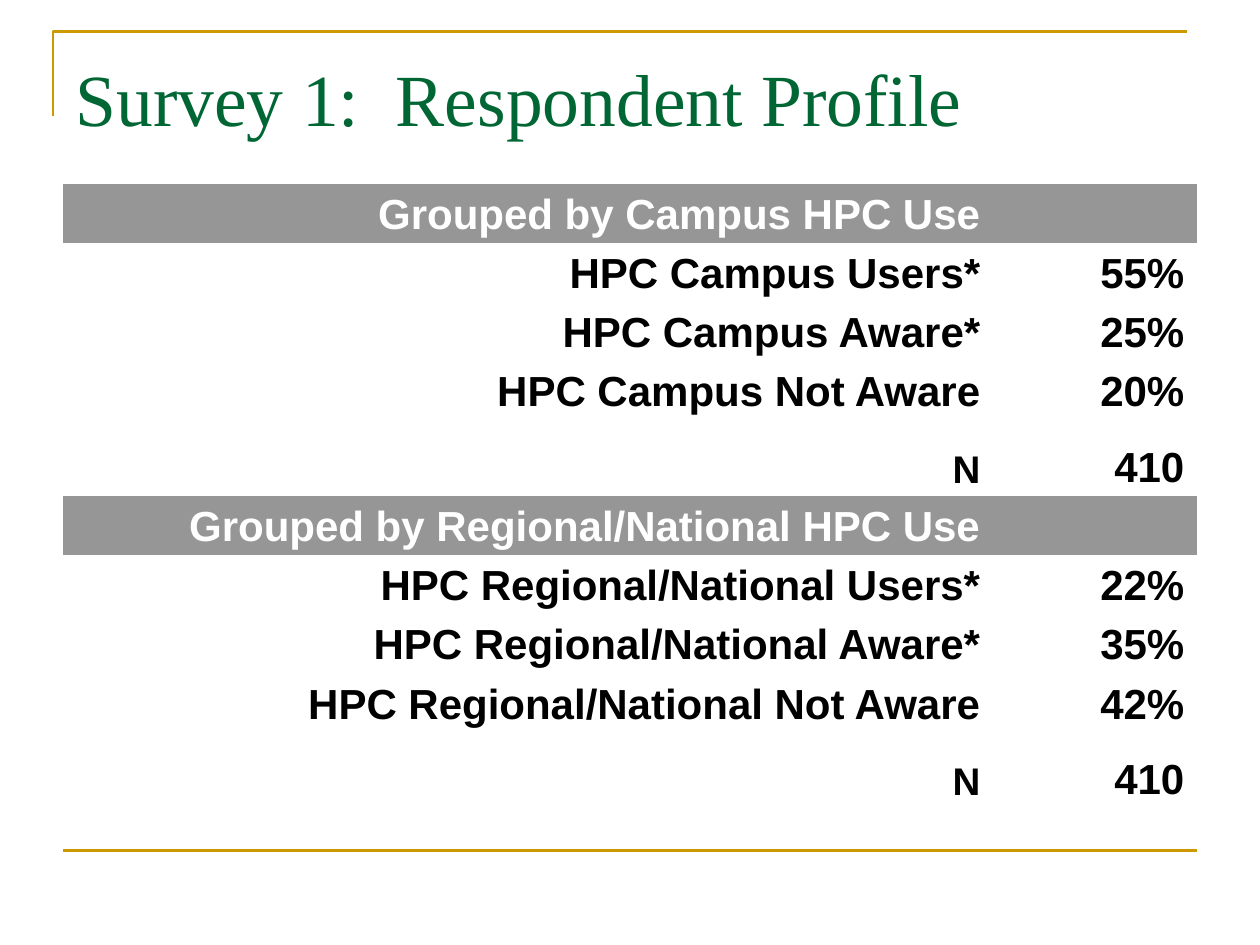
from dataclasses import dataclass

from lxml.etree import SubElement
from pptx import Presentation
from pptx.dml.color import RGBColor
from pptx.enum.shapes import MSO_CONNECTOR
from pptx.enum.text import MSO_ANCHOR, MSO_AUTO_SIZE, PP_ALIGN
from pptx.oxml.ns import qn
from pptx.slide import Slide
from pptx.table import _Cell as Cell
from pptx.util import Inches, Pt

GOLD = RGBColor(0xCC, 0x99, 0x00)
GREEN = RGBColor(0x00, 0x66, 0x33)
GRAY = RGBColor(0x96, 0x96, 0x96)
WHITE = RGBColor(0xFF, 0xFF, 0xFF)
BLACK = RGBColor(0x00, 0x00, 0x00)
NO_STYLE = "{2D5ABB26-0587-4C30-8999-92F81FD0307C}"
INDENT = Inches(0.38)


@dataclass
class Row:
    label: str
    value: str = ""
    head: bool = False
    total: bool = False


ROWS = [
    Row("Grouped by Campus HPC Use", head=True),
    Row("HPC Campus Users*", "55%"),
    Row("HPC Campus Aware*", "25%"),
    Row("HPC Campus Not Aware", "20%"),
    Row("N", "410", total=True),
    Row("Grouped by Regional/National HPC Use", head=True),
    Row("HPC Regional/National Users*", "22%"),
    Row("HPC Regional/National Aware*", "35%"),
    Row("HPC Regional/National Not Aware", "42%"),
    Row("N", "410", total=True),
]


def draw_frame(slide: Slide) -> None:
    pen = slide.shapes.build_freeform(Inches(0.42), Inches(0.92))
    pen.add_line_segments(
        [(Inches(0.42), Inches(0.25)), (Inches(9.42), Inches(0.25))], close=False
    )
    corner = pen.convert_to_shape()
    corner.fill.background()
    corner.shadow.inherit = False
    rule = slide.shapes.add_connector(
        MSO_CONNECTOR.STRAIGHT, Inches(0.5), Inches(6.75), Inches(9.5), Inches(6.75)
    )
    SubElement(rule.element.spPr, qn("a:effectLst"))
    for shape in (corner, rule):
        shape.line.color.rgb = GOLD
        shape.line.width = Pt(1.5)


def draw_title(slide: Slide, text: str) -> None:
    title = slide.shapes.title
    title.left, title.top = Inches(0.5), Inches(0.3)
    title.width, title.height = Inches(9), Inches(1.25)
    frame = title.text_frame
    frame.text = text
    frame.auto_size = MSO_AUTO_SIZE.NONE
    frame.vertical_anchor = MSO_ANCHOR.TOP
    frame.margin_top = Inches(0.12)
    line = frame.paragraphs[0]
    line.alignment = PP_ALIGN.LEFT
    font = line.runs[0].font
    font.name, font.size = "Times New Roman", Pt(42)
    font.color.rgb = GREEN


def fill_cell(cell: Cell, text: str, row: Row, small: bool) -> None:
    cell.vertical_anchor = MSO_ANCHOR.BOTTOM
    cell.margin_top = cell.margin_bottom = Inches(0.04)
    if row.head:
        cell.fill.solid()
        cell.fill.fore_color.rgb = GRAY
    else:
        cell.fill.background()
    cell.text_frame.text = text
    line = cell.text_frame.paragraphs[0]
    line.alignment = PP_ALIGN.RIGHT
    if small:
        line.space_before = Pt(4.4)
    else:
        props = line._p.get_or_add_pPr()
        props.set("marL", str(INDENT))
        props.set("indent", str(-INDENT))
    for run in line.runs:
        run.font.name, run.font.bold = "Arial", True
        run.font.size = Pt(22 if small else 24)
        run.font.color.rgb = WHITE if row.head else BLACK


def draw_table(slide: Slide, rows: list[Row]) -> None:
    frame = slide.shapes.add_table(
        len(rows), 2, Inches(0.5), Inches(1.46), Inches(9), Inches(4.96)
    )
    table = frame.table
    table.first_row = table.horz_banding = False
    for style in frame.element.iter(qn("a:tableStyleId")):
        style.text = NO_STYLE
    table.columns[0].width = Inches(7.38)
    table.columns[1].width = Inches(1.62)
    for i, row in enumerate(rows):
        table.rows[i].height = Inches(0.6 if row.total else 0.47)
        fill_cell(table.cell(i, 0), row.label, row, row.total)
        fill_cell(table.cell(i, 1), row.value, row, False)


def main() -> None:
    deck = Presentation()
    deck.slide_width, deck.slide_height = Inches(10), Inches(7.5)
    slide = deck.slides.add_slide(deck.slide_layouts[5])
    draw_frame(slide)
    draw_title(slide, "Survey 1:  Respondent Profile")
    draw_table(slide, ROWS)
    deck.save("out.pptx")


if __name__ == "__main__":
    main()
